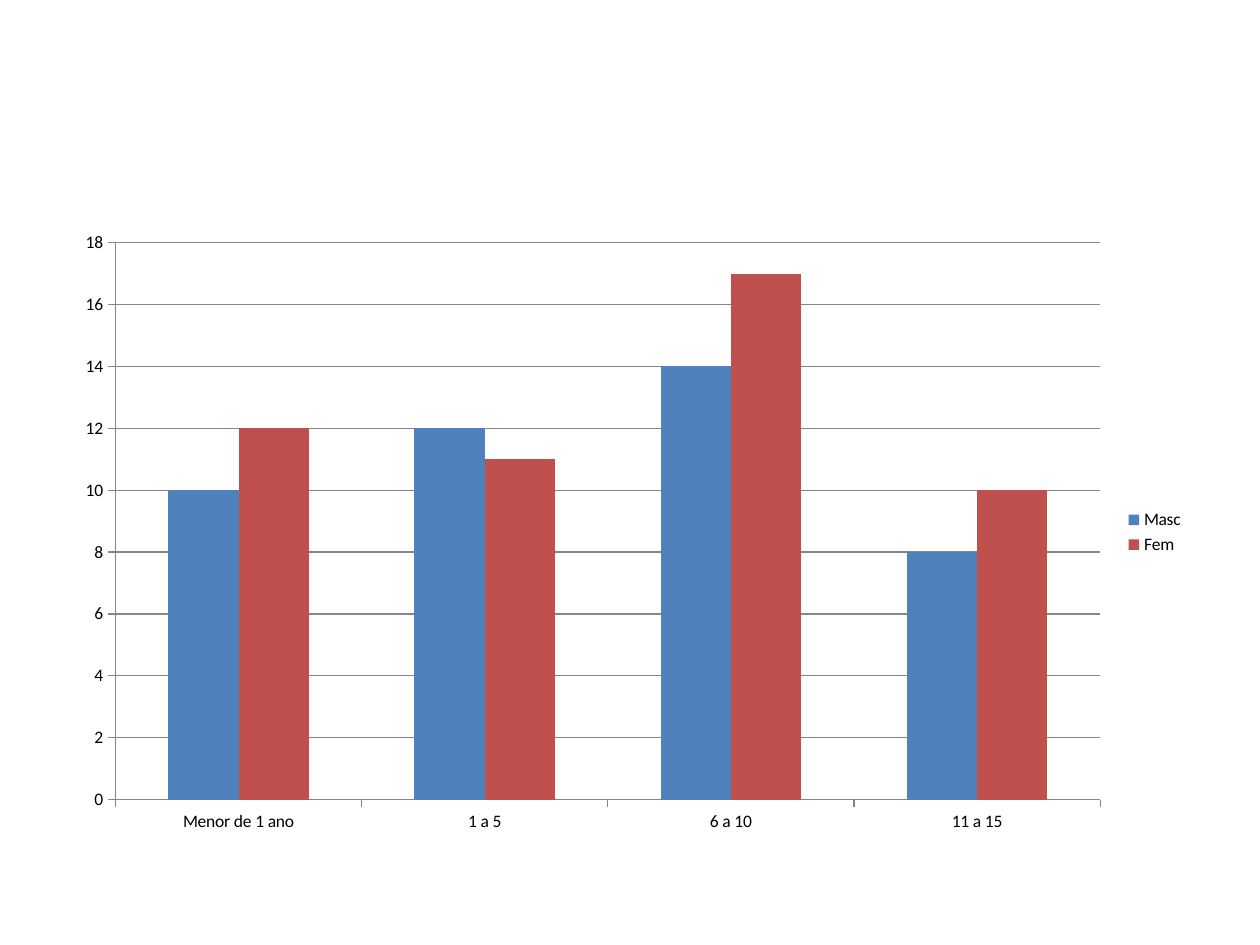
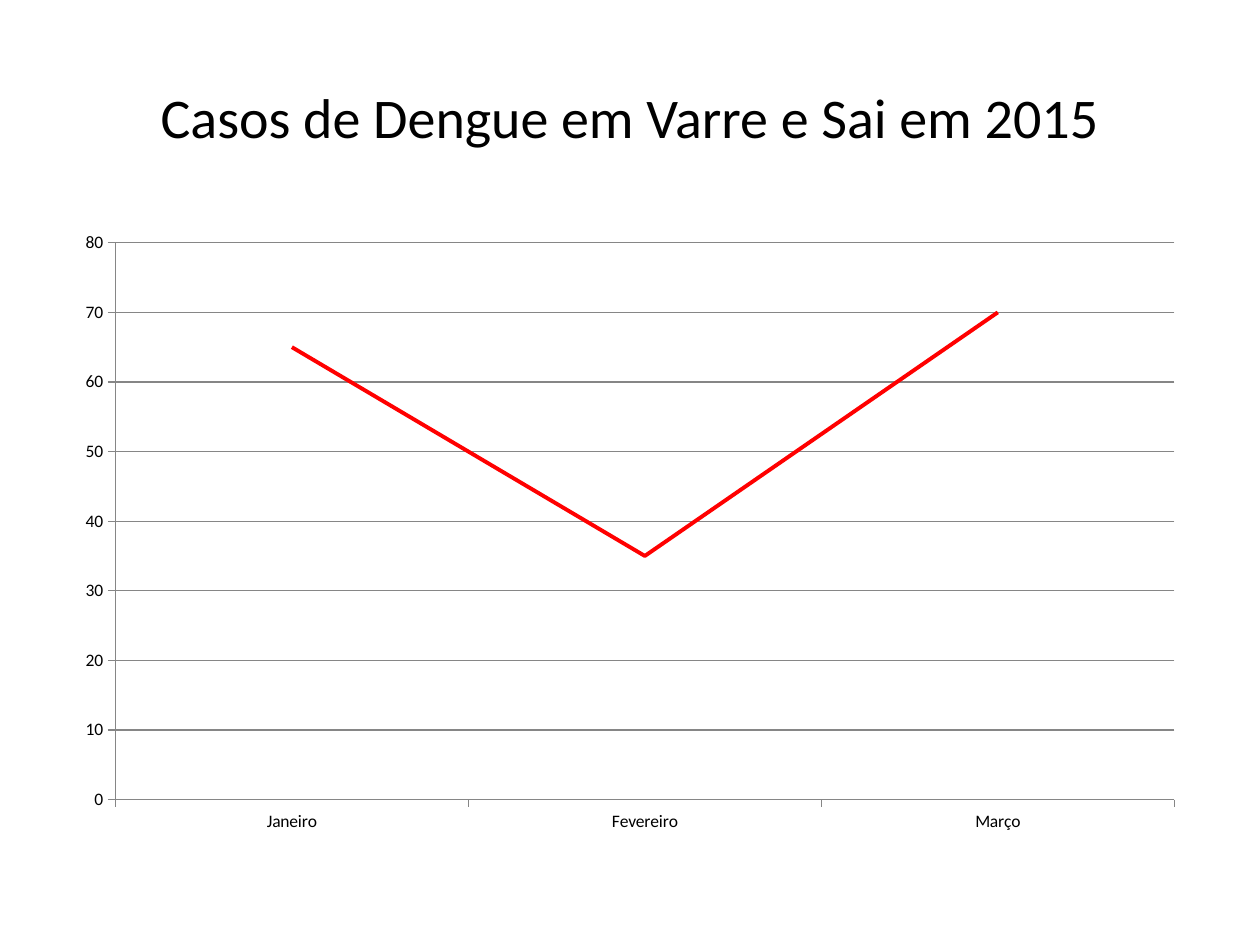
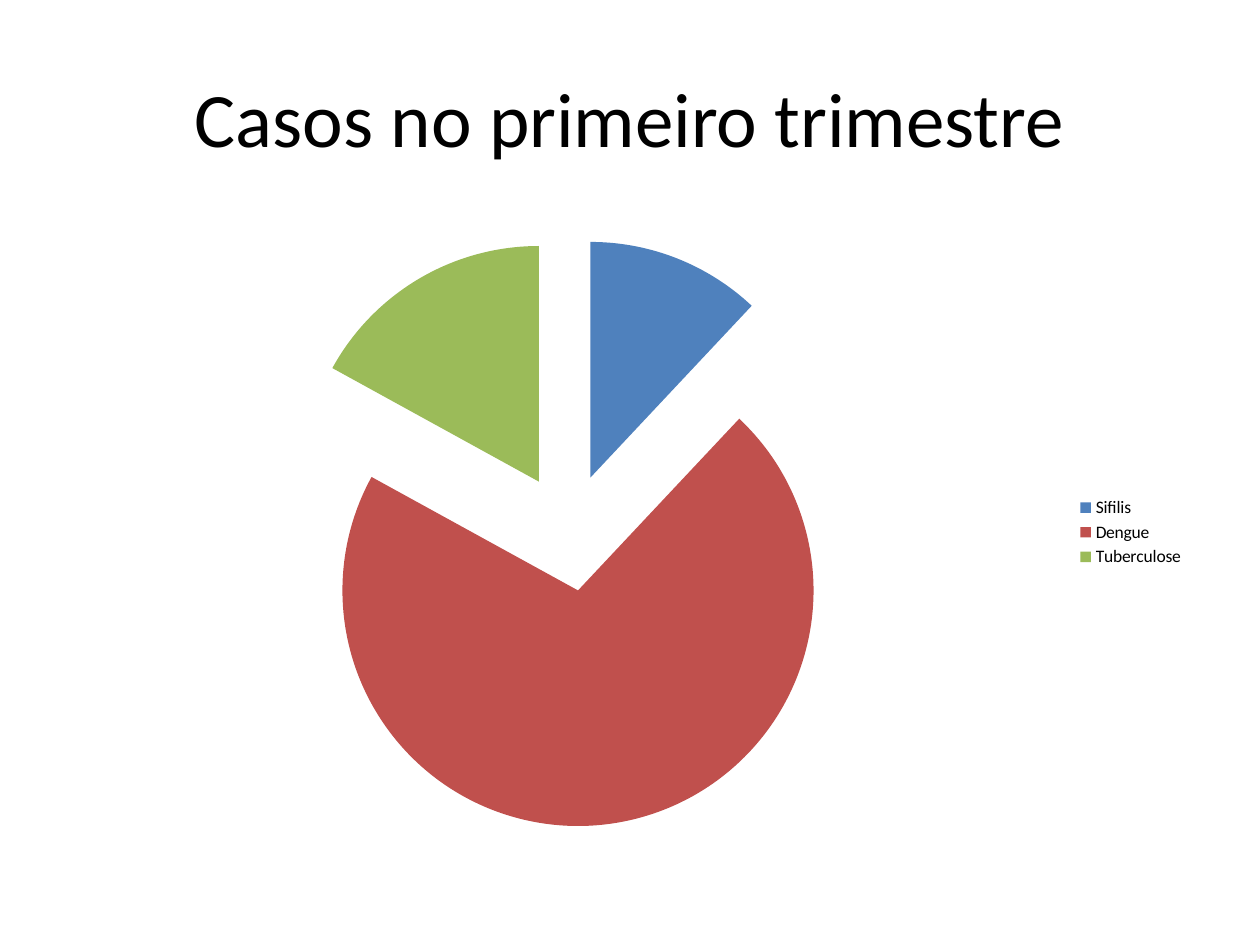
from lxml import etree
from pptx import Presentation
from pptx import util as u
from pptx.chart import data as chart_data
from pptx.dml.color import RGBColor
from pptx.enum import chart as kinds, text
from pptx.oxml import ns

SCALE = 9144
FONT, BLACK, GRAY, RED = "Calibri", "000000", "868686", "FF0000"
ACCENTS = ["4F81BD", "C0504D", "9BBB59"]
TITLE_BOX = (50, 30, 900, 125)
CHART_BOX = (50, 175, 900, 495)
TITLE_ONLY, BLANK = 5, 6


def px(length):
    """Turn px into EMU."""
    return u.Emu(length * SCALE)


def color(value):
    """Turn a hex string into a colour."""
    return RGBColor.from_string(value)


def apply(target, values):
    """Set each named attribute of the target."""
    for name, value in values.items():
        setattr(target, name, value)


def style_font(font, size):
    """Give a font the deck's face and colour at a size in points."""
    apply(font, {"name": FONT, "size": u.Pt(size)})
    font.color.rgb = color(BLACK)


def paint(fill, value):
    """Make a fill solid."""
    fill.solid()
    fill.fore_color.rgb = color(value)


def draw_line(line, value, width):
    """Give a line its colour and width in points."""
    line.color.rgb = color(value)
    line.width = u.Pt(width)


def add_title(page, wording, size, box):
    """Fill the title placeholder and fit it to the box."""
    title = page.shapes.title
    apply(title, dict(zip(("left", "top", "width", "height"), map(px, box))))
    apply(title.text_frame, {"text": wording, "word_wrap": True,
                             "vertical_anchor": text.MSO_ANCHOR.MIDDLE})
    para = title.text_frame.paragraphs[0]
    para.alignment = text.PP_ALIGN.CENTER
    style_font(para.runs[0].font, size)


def add_chart(page, kind, categories, series, box, legend=False):
    """Add a chart with the shared text style and optional right legend."""
    source = chart_data.CategoryChartData()
    source.categories = categories
    for name, values in series.items():
        source.add_series(name, values)
    chart = page.shapes.add_chart(kind, *map(px, box), source).chart
    apply(chart, {"has_title": False, "has_legend": legend})
    style_font(chart.font, 10)
    if legend:
        apply(chart.legend, {"position": kinds.XL_LEGEND_POSITION.RIGHT,
                             "include_in_layout": False})
    return chart


def style_axes(chart, top, step):
    """Draw both axes and the horizontal grid in gray."""
    for axis in (chart.category_axis, chart.value_axis):
        apply(axis, {"major_tick_mark": kinds.XL_TICK_MARK.OUTSIDE,
                     "minor_tick_mark": kinds.XL_TICK_MARK.NONE})
        draw_line(axis.format.line, GRAY, 0.75)
    apply(chart.value_axis, {"minimum_scale": 0, "maximum_scale": top,
                             "major_unit": step, "has_major_gridlines": True})
    draw_line(chart.value_axis.major_gridlines.format.line, GRAY, 0.75)


def build_age_page(deck):
    """Compare cases by age group and sex in columns."""
    page = deck.slides.add_slide(deck.slide_layouts[BLANK])
    chart = add_chart(page, kinds.XL_CHART_TYPE.COLUMN_CLUSTERED,
                      ["Menor de 1 ano", "1 a 5", "6 a 10", "11 a 15"],
                      {"Masc": [10, 12, 14, 8], "Fem": [12, 11, 17, 10]},
                      CHART_BOX, legend=True)
    style_axes(chart, 18, 2)
    plot = chart.plots[0]
    apply(plot, {"vary_by_categories": False, "gap_width": 150, "overlap": 0})
    for series, accent in zip(plot.series, ACCENTS):
        paint(series.format.fill, accent)


def build_dengue_page(deck):
    """Show monthly dengue cases as a line."""
    page = deck.slides.add_slide(deck.slide_layouts[TITLE_ONLY])
    add_title(page, "Casos de Dengue em Varre e Sai em 2015", 32, TITLE_BOX)
    chart = add_chart(page, kinds.XL_CHART_TYPE.LINE,
                      ["Janeiro", "Fevereiro", "Março"],
                      {"Series 1": [65, 35, 70]}, CHART_BOX)
    style_axes(chart, 80, 10)
    plot = chart.plots[0]
    plot.vary_by_categories = False
    cases = plot.series[0]
    cases.smooth = False
    draw_line(cases.format.line, RED, 2.25)


def build_quarter_page(deck):
    """Show the quarter's cases by disease as an exploded pie."""
    page = deck.slides.add_slide(deck.slide_layouts[TITLE_ONLY])
    add_title(page, "Casos no primeiro trimestre", 44, TITLE_BOX)
    chart = add_chart(page, kinds.XL_CHART_TYPE.PIE,
                      ["Sifilis", "Dengue", "Tuberculose"],
                      {"Series 1": [12, 71, 17]}, CHART_BOX, legend=True)
    plot = chart.plots[0]
    plot.vary_by_categories = True
    diseases = plot.series[0]
    explosion = etree.Element(ns.qn("c:explosion"), val="25")
    diseases._element.find(ns.qn("c:tx")).addnext(explosion)
    for index, accent in enumerate(ACCENTS):
        paint(diseases.points[index].format.fill, accent)


def main():
    """Build the deck and save it."""
    deck = Presentation()
    apply(deck, {"slide_width": px(1000), "slide_height": px(750)})
    for build in (build_age_page, build_dengue_page, build_quarter_page):
        build(deck)
    deck.save("out.pptx")


if __name__ == "__main__":
    main()
